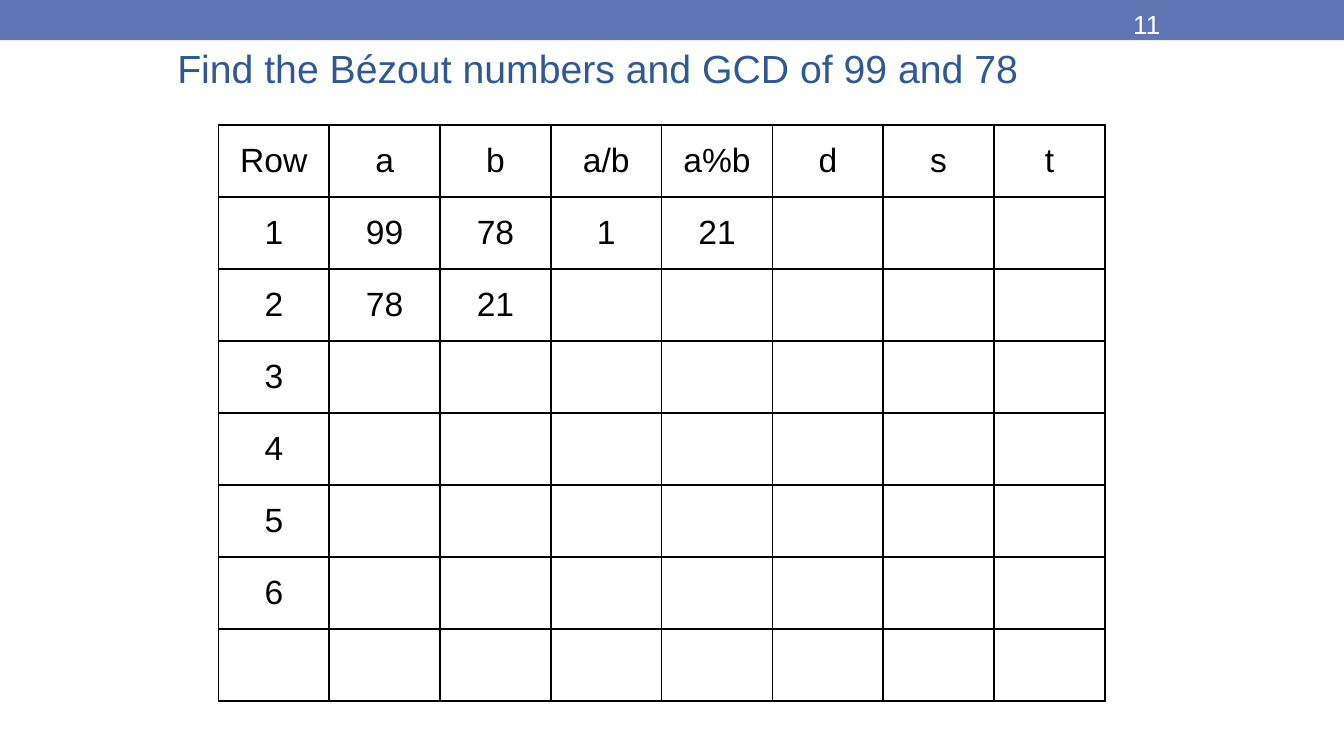
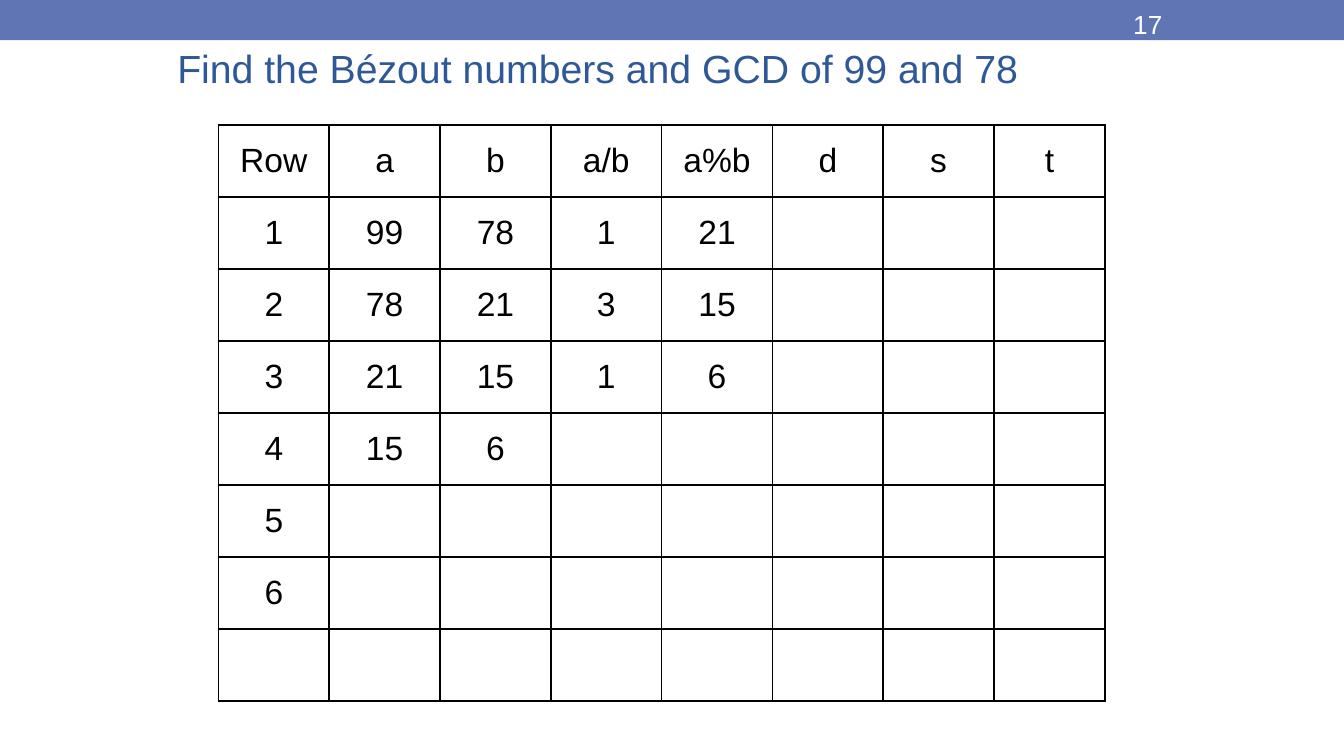
"""Build two steps of the Bézout and GCD worksheet for 99 and 78."""
from dataclasses import dataclass

from lxml import etree
from pptx import Presentation
from pptx.dml.color import RGBColor
from pptx.enum.shapes import MSO_SHAPE
from pptx.enum.text import MSO_ANCHOR, PP_ALIGN
from pptx.oxml.ns import qn
from pptx.util import Pt

RECTANGLE = MSO_SHAPE.RECTANGLE
TOP, MIDDLE, BOTTOM = MSO_ANCHOR.TOP, MSO_ANCHOR.MIDDLE, MSO_ANCHOR.BOTTOM
LEFT, CENTER = PP_ALIGN.LEFT, PP_ALIGN.CENTER

FONT = "Arial"
COLORS = {"band": "6076B4", "title": "2F5897", "text": "000000",
          "border": "000000", "number": "FFFFFF"}
PAGE_WIDTH, PAGE_HEIGHT = 720, 405
FIRST, SECOND = 99, 78
TITLE = f"Find the Bézout numbers and GCD of {FIRST} and {SECOND}"
HEADERS = ("Row", "a", "b", "a/b", "a%b", "d", "s", "t")
NUMBERED_ROWS = 6
TABLE_ROWS = NUMBERED_ROWS + 2


@dataclass(frozen=True)
class Area:
    left: float
    top: float
    width: float
    height: float

    def lengths(self) -> tuple:
        return Pt(self.left), Pt(self.top), Pt(self.width), Pt(self.height)


@dataclass(frozen=True)
class Worksheet:
    number: int
    finished_rows: int


BAND = Area(0, 0, PAGE_WIDTH, 21.6)
TITLE_AREA = Area(90, 0, 540, 54)
NUMBER_AREA = Area(600, 0.9, 84, 19.5)
TABLE_AREA = Area(117, 67, 475, 308.6)
WORKSHEETS = (Worksheet(11, 1), Worksheet(17, 3))


def write(paragraph, text: str, *, size: float, color: str, align=LEFT) -> None:
    paragraph.alignment = align
    span = paragraph.add_run()
    span.text = text
    span.font.name = FONT
    span.font.size = Pt(size)
    span.font.bold = False
    span.font.color.rgb = RGBColor.from_string(COLORS[color])


def add_text(page, area: Area, text: str, *, size: float, color: str,
             anchor=TOP, insets: tuple = (7.2, 3.6)) -> None:
    frame = page.shapes.add_textbox(*area.lengths()).text_frame
    frame.word_wrap = True
    frame.vertical_anchor = anchor
    frame.margin_left = frame.margin_right = Pt(insets[0])
    frame.margin_top = frame.margin_bottom = Pt(insets[1])
    write(frame.paragraphs[0], text, size=size, color=color)


def add_band(page) -> None:
    band = page.shapes.add_shape(RECTANGLE, *BAND.lengths())
    band.shadow.inherit = False
    band.fill.solid()
    band.fill.fore_color.rgb = RGBColor.from_string(COLORS["band"])
    band.line.fill.background()


def set_borders(cell) -> None:
    properties = cell._tc.get_or_add_tcPr()
    for index, side in enumerate(("a:lnL", "a:lnR", "a:lnT", "a:lnB")):
        line = etree.Element(qn(side), w=str(Pt(1)))
        fill = etree.SubElement(line, qn("a:solidFill"))
        etree.SubElement(fill, qn("a:srgbClr"), val=COLORS["border"])
        properties.insert(index, line)


def worksheet_rows(finished_rows: int) -> list[list]:
    rows = [list(HEADERS)]
    a, b = FIRST, SECOND
    for number in range(1, NUMBERED_ROWS + 1):
        row = [number]
        if number <= finished_rows + 1:
            row += [a, b]
        if number <= finished_rows:
            row += [a // b, a % b]
            a, b = b, a % b
        rows.append(row)
    return rows


def add_table(page, finished_rows: int) -> None:
    table = page.shapes.add_table(TABLE_ROWS, len(HEADERS), *TABLE_AREA.lengths()).table
    table.first_row = table.horz_banding = False
    for column in table.columns:
        column.width = Pt(TABLE_AREA.width / len(HEADERS))
    for row in table.rows:
        row.height = Pt(TABLE_AREA.height / TABLE_ROWS)
    for cell in table.iter_cells():
        cell.fill.background()
        cell.vertical_anchor = MIDDLE
        cell.margin_left = cell.margin_right = Pt(5.4)
        cell.margin_top = cell.margin_bottom = Pt(2.7)
        set_borders(cell)
    for row_index, values in enumerate(worksheet_rows(finished_rows)):
        for column_index, value in enumerate(values):
            paragraph = table.cell(row_index, column_index).text_frame.paragraphs[0]
            write(paragraph, str(value), size=18, color="text", align=CENTER)


def add_worksheet(deck, worksheet: Worksheet) -> None:
    page = deck.slides.add_slide(deck.slide_layouts[6])
    add_band(page)
    add_text(page, TITLE_AREA, TITLE, size=21, color="title",
             anchor=BOTTOM, insets=(5, 5))
    add_table(page, worksheet.finished_rows)
    add_text(page, NUMBER_AREA, str(worksheet.number), size=14, color="number")


def main() -> None:
    deck = Presentation()
    deck.slide_width, deck.slide_height = Pt(PAGE_WIDTH), Pt(PAGE_HEIGHT)
    for worksheet in WORKSHEETS:
        add_worksheet(deck, worksheet)
    deck.save("out.pptx")


if __name__ == "__main__":
    main()
